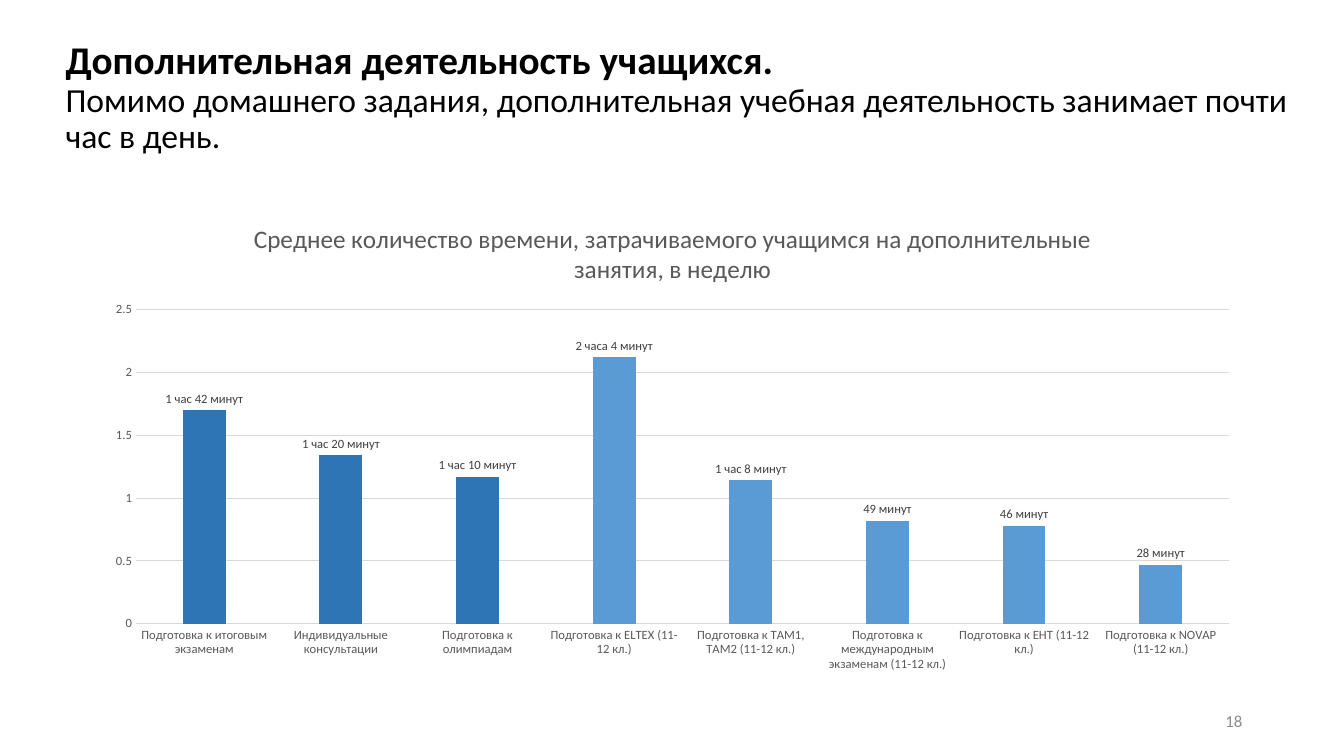
from dataclasses import dataclass
from typing import Any

from pptx import Presentation
from pptx import util as u
from pptx.chart import data as chart_data
from pptx.dml import color
from pptx.enum import chart as ch
from pptx.enum import text

COLORS = {
    "black": "000000",
    "label": "404040",
    "axis": "595959",
    "number": "8C8C8C",
    "grid": "D9D9D9",
    "general": "2E75B6",
    "senior": "5B9BD5",
}
FONT = "Calibri"
TITLE_ONLY = 5


@dataclass(frozen=True)
class Activity:
    name: str
    hours: float
    label: str
    group: str = "senior"


ACTIVITIES = [
    Activity("Подготовка к итоговым экзаменам", 1.7, "1 час 42 минут", "general"),
    Activity("Индивидуальные консультации", 1.34, "1 час 20 минут", "general"),
    Activity("Подготовка к олимпиадам", 1.17, "1 час 10 минут", "general"),
    Activity("Подготовка к ELTEX (11-12 кл.)", 2.12, "2 часа 4 минут"),
    Activity("Подготовка к TAM1, TAM2 (11-12 кл.)", 1.14, "1 час 8 минут"),
    Activity("Подготовка к международным экзаменам (11-12 кл.)", 0.82, "49 минут"),
    Activity("Подготовка к ЕНТ (11-12 кл.)", 0.78, "46 минут"),
    Activity("Подготовка к NOVAP (11-12 кл.)", 0.47, "28 минут"),
]


def rgb(name: str) -> color.RGBColor:
    return color.RGBColor.from_string(COLORS[name])


def apply(target: Any, values: dict[str, Any]) -> None:
    for name, value in values.items():
        setattr(target, name, value)


def style_font(font: Any, size: float, tint: str, bold: bool = False) -> None:
    apply(font, {"name": FONT, "size": u.Pt(size), "bold": bold})
    font.color.rgb = rgb(tint)


def place(shape: Any, left: float, top: float, width: float, height: float) -> None:
    lengths = {"left": left, "top": top, "width": width, "height": height}
    apply(shape, {name: u.Inches(value) for name, value in lengths.items()})


def style_line(line: Any) -> None:
    line.color.rgb = rgb("grid")
    line.width = u.Pt(0.75)


def add_title(page: Any) -> None:
    title = page.shapes.title
    place(title, 0.55, 0.25, 12.49, 1.45)
    apply(title.text_frame, {
        "auto_size": text.MSO_AUTO_SIZE.NONE,
        "vertical_anchor": text.MSO_ANCHOR.MIDDLE,
        "word_wrap": True,
    })
    para = title.text_frame.paragraphs[0]
    apply(para, {"alignment": text.PP_ALIGN.LEFT, "line_spacing": 0.9})
    heading = para.add_run()
    heading.text = "Дополнительная деятельность учащихся."
    style_font(heading.font, 28, "black", bold=True)
    para.add_line_break()
    finding = para.add_run()
    finding.text = ("Помимо домашнего задания, дополнительная учебная "
                    "деятельность занимает почти час в день.")
    style_font(finding.font, 24, "black")


def add_page_number(page: Any) -> None:
    box = page.shapes.add_textbox(0, 0, 0, 0)
    place(box, 9.42, 6.95, 3, 0.4)
    apply(box.text_frame, {"word_wrap": True, "vertical_anchor": text.MSO_ANCHOR.MIDDLE})
    para = box.text_frame.paragraphs[0]
    para.alignment = text.PP_ALIGN.RIGHT
    span = para.add_run()
    span.text = "18"
    style_font(span.font, 12, "number")


def style_axes(chart: Any) -> None:
    for axis in (chart.category_axis, chart.value_axis):
        apply(axis, {
            "major_tick_mark": ch.XL_TICK_MARK.NONE,
            "minor_tick_mark": ch.XL_TICK_MARK.NONE,
        })
        style_font(axis.tick_labels.font, 9, "axis")
    style_line(chart.category_axis.format.line)
    hours = chart.value_axis
    apply(hours, {"minimum_scale": 0, "maximum_scale": 2.5, "major_unit": 0.5})
    hours.format.line.fill.background()
    style_line(hours.major_gridlines.format.line)


def style_columns(plot: Any) -> None:
    apply(plot, {"gap_width": 219, "overlap": -27, "vary_by_categories": False})
    series = plot.series[0]
    series.format.fill.solid()
    series.format.fill.fore_color.rgb = rgb("senior")
    for index, activity in enumerate(ACTIVITIES):
        point = series.points[index]
        if activity.group != "senior":
            point.format.fill.solid()
            point.format.fill.fore_color.rgb = rgb(activity.group)
        span = point.data_label.text_frame.paragraphs[0].add_run()
        span.text = activity.label
        style_font(span.font, 9, "label")
        point.data_label.position = ch.XL_LABEL_POSITION.OUTSIDE_END


def add_hours_chart(page: Any) -> None:
    data = chart_data.CategoryChartData(number_format="General")
    data.categories = [activity.name for activity in ACTIVITIES]
    data.add_series("Series 1", [activity.hours for activity in ACTIVITIES])
    frame = page.shapes.add_chart(
        ch.XL_CHART_TYPE.COLUMN_CLUSTERED,
        u.Inches(0.92), u.Inches(2), u.Inches(11.5), u.Inches(4.76), data)
    chart = frame.chart
    chart.has_legend = False
    style_font(chart.font, 10, "black")
    span = chart.chart_title.text_frame.paragraphs[0].add_run()
    span.text = ("Среднее количество времени, затрачиваемого учащимся "
                 "на дополнительные занятия, в неделю")
    style_font(span.font, 18, "axis")
    chart.chart_title.include_in_layout = False
    style_axes(chart)
    style_columns(chart.plots[0])


def main() -> None:
    deck = Presentation()
    apply(deck, {"slide_width": u.Inches(13.33), "slide_height": u.Inches(7.5)})
    page = deck.slides.add_slide(deck.slide_layouts[TITLE_ONLY])
    add_title(page)
    add_page_number(page)
    add_hours_chart(page)
    deck.save("out.pptx")


if __name__ == "__main__":
    main()
